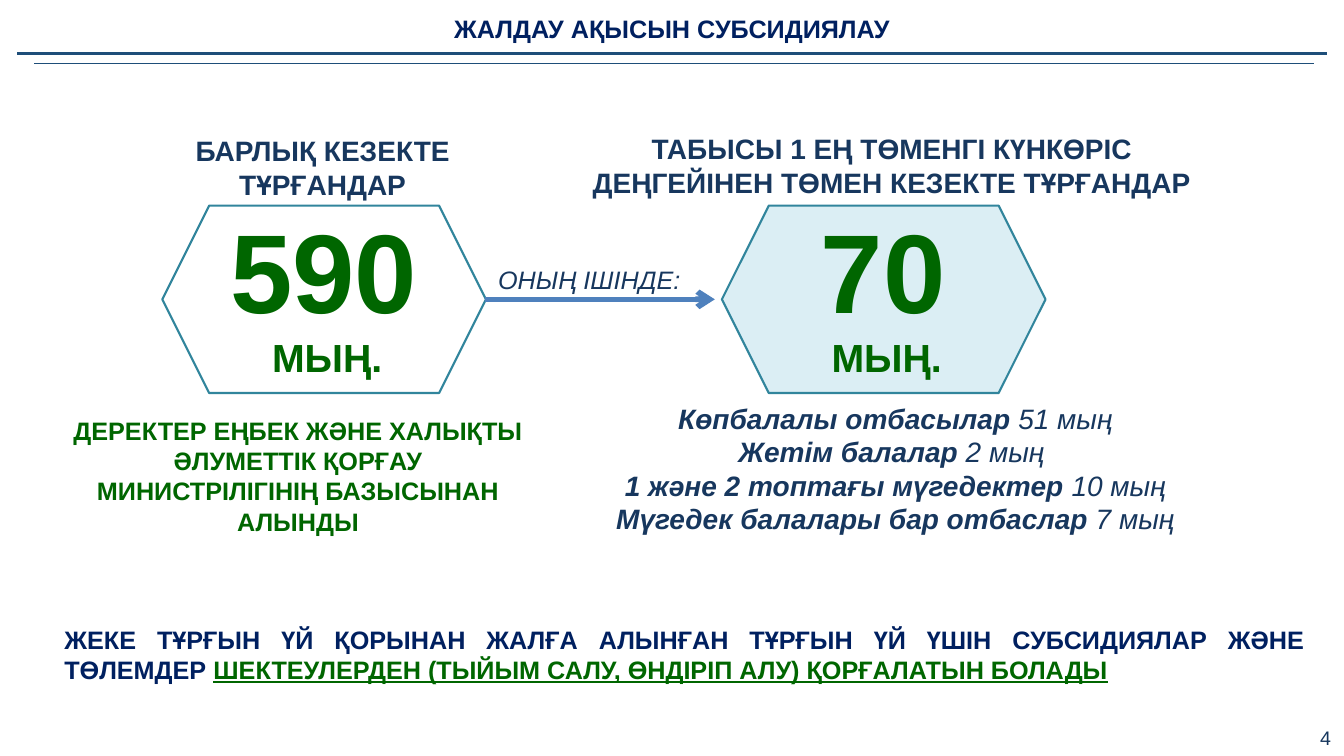
from lxml import etree
from pptx import Presentation
from pptx.dml.color import RGBColor
from pptx.enum.shapes import MSO_CONNECTOR, MSO_SHAPE
from pptx.enum.text import MSO_ANCHOR, PP_ALIGN
from pptx.oxml.ns import qn
from pptx.util import Inches, Pt

STRAIGHT = MSO_CONNECTOR.STRAIGHT
HEXAGON = MSO_SHAPE.HEXAGON
TOP, MIDDLE = MSO_ANCHOR.TOP, MSO_ANCHOR.MIDDLE
LEFT, CENTER, RIGHT, JUSTIFY = PP_ALIGN.LEFT, PP_ALIGN.CENTER, PP_ALIGN.RIGHT, PP_ALIGN.JUSTIFY

FONT = "Arial"
COLORS = {
    "navy": "002060",
    "slate": "17375E",
    "green": "006600",
    "rule": "1E4E79",
    "outline": "31859C",
    "pale": "DBEEF4",
    "arrow": "4F81BD",
}
SLIDE_WIDTH, SLIDE_HEIGHT = 13.33, 7.5
HEXAGON_WIDTH, HEXAGON_HEIGHT = 3.21, 1.86


def color(name):
    return RGBColor.from_string(COLORS[name])


def add_text(page, box, lines, size, tint, align=CENTER, anchor=TOP, wrap=True,
             insets=(0.1, 0.05), **style):
    frame = page.shapes.add_textbox(*map(Inches, box)).text_frame
    across, down = map(Inches, insets)
    layout = {"word_wrap": wrap, "vertical_anchor": anchor, "margin_left": across,
              "margin_right": across, "margin_top": down, "margin_bottom": down}
    for name, value in layout.items():
        setattr(frame, name, value)
    for index, spans in enumerate(lines):
        para = frame.add_paragraph() if index else frame.paragraphs[0]
        para.alignment = align
        for text, changes in spans:
            span = para.add_run()
            span.text = text
            look = {"name": FONT, "size": Pt(size), "tint": tint, **style, **changes}
            span.font.color.rgb = color(look.pop("tint"))
            for name, value in look.items():
                setattr(span.font, name, value)


def add_line(page, start, end, tint, width):
    line = page.shapes.add_connector(STRAIGHT, *map(Inches, (*start, *end)))
    line.line.color.rgb = color(tint)
    line.line.width = Pt(width)
    etree.SubElement(line._element.spPr, qn("a:effectLst"))
    return line


def add_header(page, box, title):
    left, top, width, height = box
    add_text(page, box, [[(title, {})]], 18, "navy", anchor=MIDDLE,
             insets=(0.07, 0.04), bold=True)
    for start, end, gap, weight in ((0.17, 13.16, 0.01, 2.25), (0.34, 13.03, 0.11, 1)):
        y = top + height + gap
        add_line(page, (left + start, y), (left + end, y), "rule", weight)


def add_figure(page, box, number, fill=None):
    left, top, width, height = box
    hexagon = page.shapes.add_shape(HEXAGON, *map(Inches, box))
    hexagon.shadow.inherit = False
    if fill:
        hexagon.fill.solid()
        hexagon.fill.fore_color.rgb = color(fill)
    else:
        hexagon.fill.background()
    hexagon.line.color.rgb = color("outline")
    hexagon.line.width = Pt(1.5)
    add_text(page, (left - 0.02, top - 0.09, width + 0.03, 1.45),
             [[(number, {})]], 80, "green", bold=True)
    add_text(page, (left + 0.99, top + 1.22, 1.31, 0.57),
             [[("МЫҢ.", {})]], 28, "green", align=LEFT, wrap=False, bold=True)


def add_queue(page, box):
    left, top, width, height = box
    add_text(page, (left + 1.05, top + 0.02, 3.22, 0.77),
             [[("БАРЛЫҚ КЕЗЕКТЕ ТҰРҒАНДАР", {})]], 20, "slate", bold=True)
    add_figure(page, (left + 1.07, top + 0.78, HEXAGON_WIDTH, HEXAGON_HEIGHT), "590")
    source = ("ДЕРЕКТЕР ЕҢБЕК ЖӘНЕ ХАЛЫҚТЫ ӘЛУМЕТТІК ҚОРҒАУ "
              "МИНИСТРІЛІГІНІҢ БАЗЫСЫНАН АЛЫНДЫ")
    add_text(page, (left, top + 2.81, width, 1.31), [[(source, {})]],
             18, "green", bold=True)


def add_low_income(page, box):
    left, top, width, height = box
    heading = "ТАБЫСЫ 1 ЕҢ ТӨМЕНГІ КҮНКӨРІС ДЕҢГЕЙІНЕН ТӨМЕН КЕЗЕКТЕ ТҰРҒАНДАР"
    add_text(page, (left, top, width, 0.77), [[(heading, {})]], 20, "slate", bold=True)
    add_figure(page, (left + 1.41, top + 0.78, HEXAGON_WIDTH, HEXAGON_HEIGHT),
               "70", "pale")
    groups = (
        ("Көпбалалы отбасылар ", "51 мың"),
        ("Жетім балалар", " 2 мың "),
        ("1 және 2 топтағы мүгедектер ", "10 мың"),
        ("Мүгедек балалары бар отбаслар ", "7 мың"),
    )
    lines = [[(group, {"bold": True}), (count, {"bold": False})]
             for group, count in groups]
    add_text(page, (left + 0.17, top + 2.67, 5.92, 1.45), lines, 20, "slate", italic=True)


def add_link(page, box, label):
    left, top, width, height = box
    y = top + height
    arrow = add_line(page, (left, y), (left + width, y), "arrow", 4)
    etree.SubElement(arrow.line._get_or_add_ln(), qn("a:tailEnd"), type="arrow")
    add_text(page, (left - 0.12, top, 2.31, height), [[(label, {})]],
             18, "slate", italic=True)


def add_conclusion(page, box):
    spans = [
        ("ЖЕКЕ ТҰРҒЫН ҮЙ ҚОРЫНАН ЖАЛҒА АЛЫНҒАН ТҰРҒЫН ҮЙ ҮШІН "
         "СУБСИДИЯЛАР ЖӘНЕ ТӨЛЕМДЕР ", {}),
        ("ШЕКТЕУЛЕРДЕН (ТЫЙЫМ САЛУ, ӨНДІРІП АЛУ) ҚОРҒАЛАТЫН БОЛАДЫ",
         {"tint": "green", "underline": True}),
    ]
    add_text(page, box, [spans], 18, "navy", align=JUSTIFY, bold=True)


def main():
    deck = Presentation()
    deck.slide_width, deck.slide_height = Inches(SLIDE_WIDTH), Inches(SLIDE_HEIGHT)
    page = deck.slides.add_slide(deck.slide_layouts[6])
    add_header(page, (0, 0.04, SLIDE_WIDTH, 0.48), "ЖАЛДАУ АҚЫСЫН СУБСИДИЯЛАУ")
    add_queue(page, (0.54, 1.26, 4.83, 4.12))
    add_low_income(page, (5.75, 1.26, 6.19, 4.12))
    add_link(page, (4.81, 2.57, 2.28, 0.4), "ОНЫҢ ІШІНДЕ:")
    add_conclusion(page, (0.54, 6.14, 12.5, 0.71))
    add_text(page, (12.79, 7.13, 0.54, 0.37), [[("4", {})]], 14, "slate",
             align=RIGHT, anchor=MIDDLE, insets=(0.13, 0.07))
    deck.save("out.pptx")


if __name__ == "__main__":
    main()
